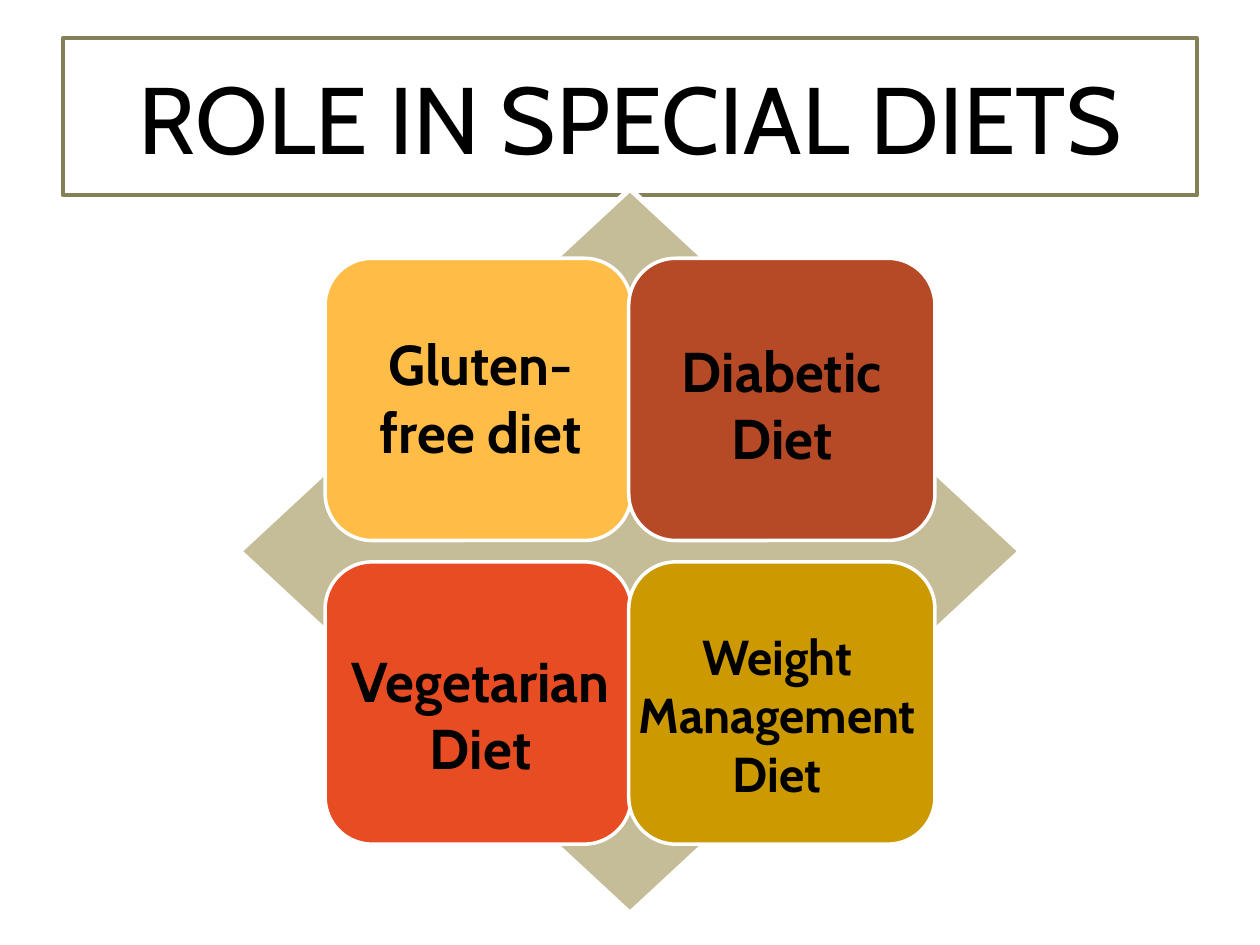
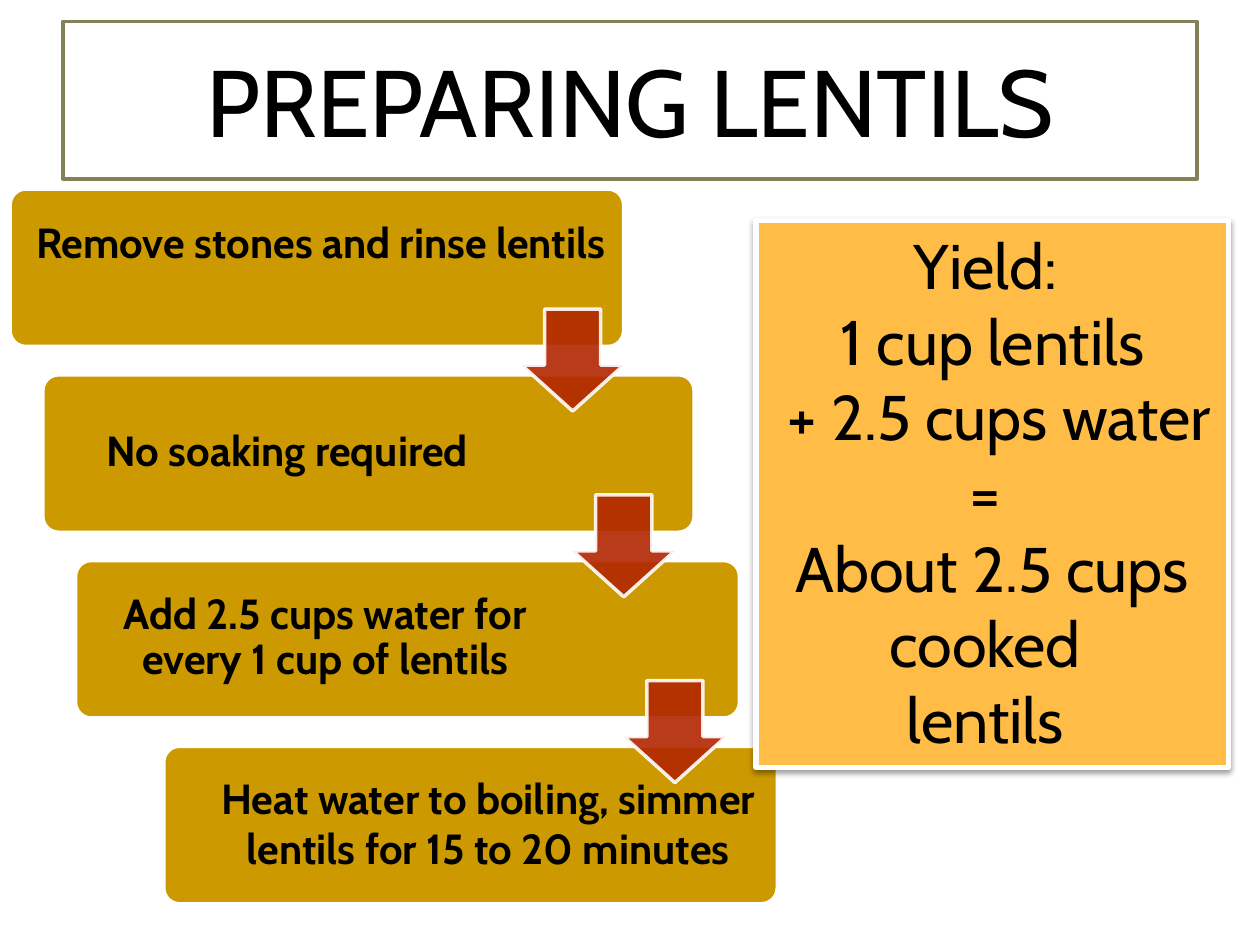
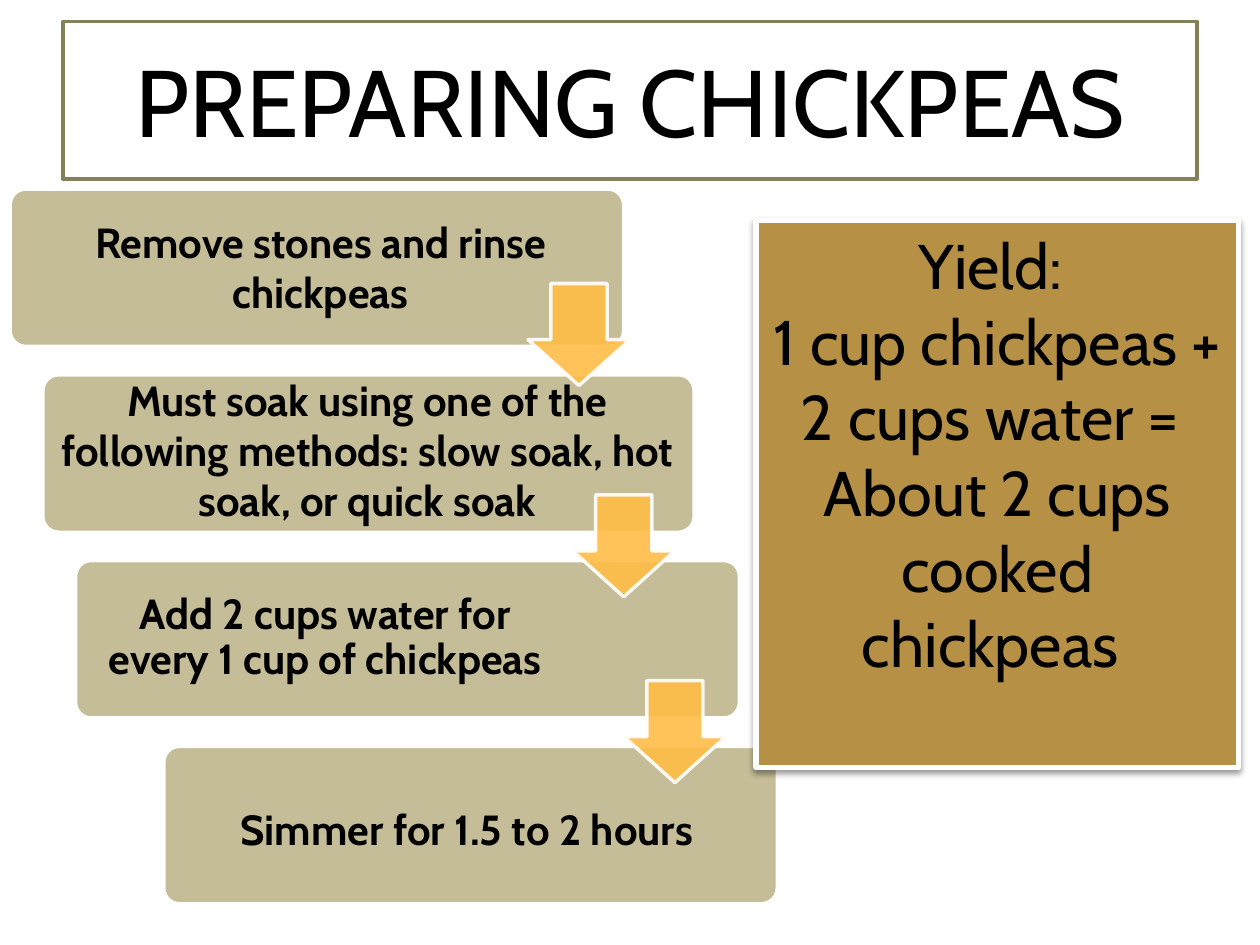
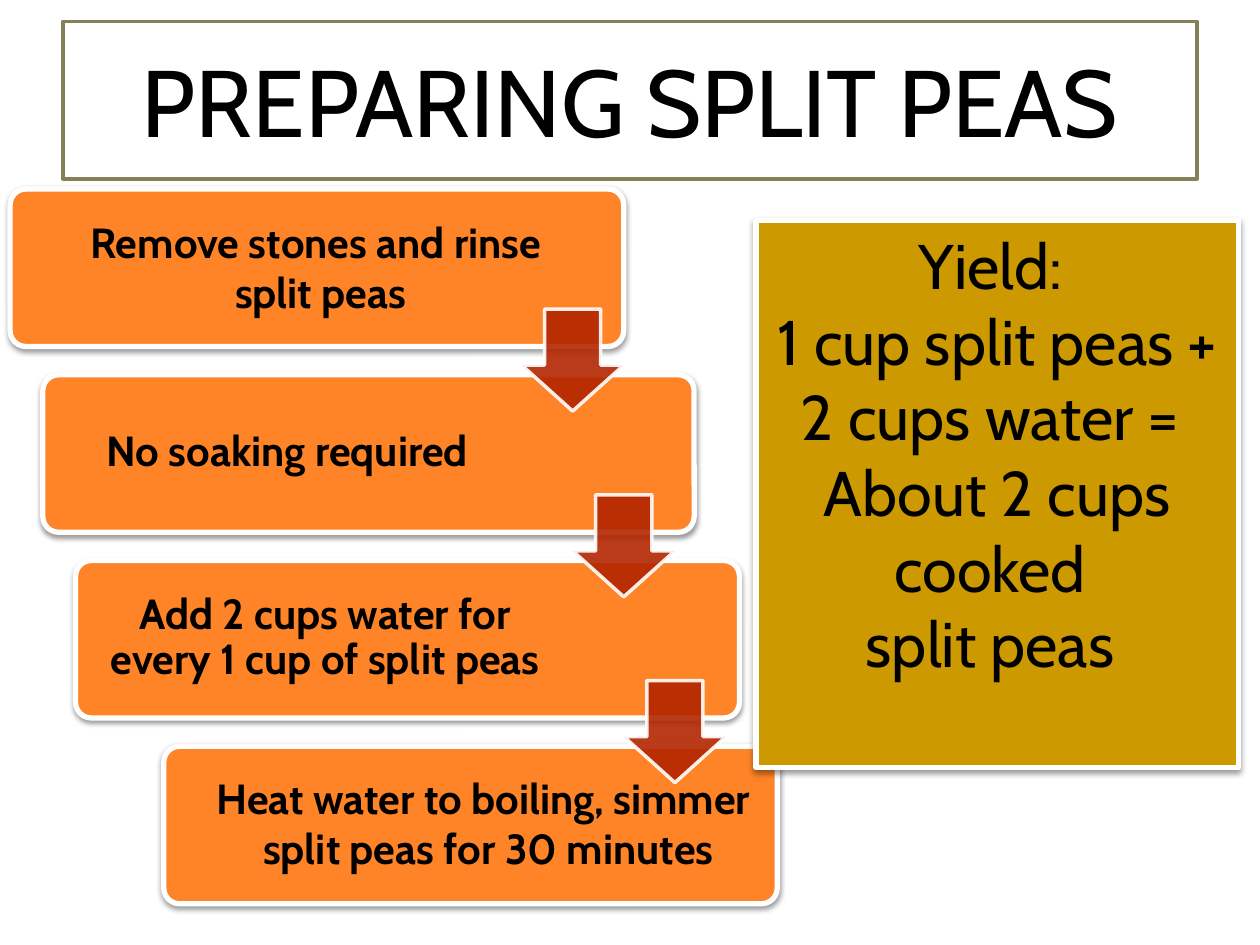
from pptx import Presentation
from pptx.dml.color import RGBColor as RGB
from pptx.enum.shapes import MSO_SHAPE as Geo
from pptx.enum.text import MSO_ANCHOR as Anchor, PP_ALIGN as Align
from pptx.oxml import parse_xml
from pptx.oxml.ns import nsdecls, qn
from pptx.util import Pt

BLACK = RGB(0x00, 0x00, 0x00)
WHITE = RGB(0xFF, 0xFF, 0xFF)
OLIVE = RGB(0x84, 0x80, 0x58)
SAND = RGB(0xC4, 0xBD, 0x97)
AMBER = RGB(0xFF, 0xBD, 0x47)
RUST = RGB(0xB6, 0x49, 0x26)
RED = RGB(0xE8, 0x4C, 0x22)
GOLD = RGB(0xCC, 0x99, 0x00)
BRICK = RGB(0xB2, 0x26, 0x00)
TAN = RGB(0xB5, 0x90, 0x45)
ORANGE = RGB(0xFF, 0x84, 0x27)
FONT = "Cabin"

DIETS = [
    ("Gluten-free diet", AMBER, 32, (189.4, 185, 170.6, 85)),
    ("Diabetic Diet", RUST, 32, (365.8, 188.6, 162, 85)),
    ("Vegetarian Diet", RED, 32, (189.4, 365.8, 170.6, 85)),
    ("Weight Management Diet", GOLD, 28, (354.2, 354.2, 180, 108.7)),
]

RINSE = (12.2, 120.2, 342, 65.5)
SOAK = (27.4, 216.7, 273.6, 84.2)
METHOD = (23.8, 210.2, 372.2, 94.3)
WATER = (46.1, 322.6, 279.4, 84.2)
HEAT = (90, 437.8, 378, 65.5)
SIMMER = (77.8, 455.8, 378, 36)
INNER = dict(anchor=Anchor.MIDDLE, inset=7.2, space=0.9)

RECIPES = [
    dict(
        title="PREPARING LENTILS", step=GOLD, arrow=BRICK, card=AMBER,
        wide=270, lift=False, first=(298.1, 176.6),
        notes=[
            (["Remove stones and rinse lentils"], RINSE, {}),
            (["No soaking required"], SOAK, INNER),
            (["Add 2.5 cups water for every 1 cup of lentils"], WATER, INNER),
            (["Heat water to boiling, simmer lentils for 15 to 20 minutes"],
             HEAT, {}),
        ],
        result=["Yield: ", "1 cup lentils", " + 2.5 cups water = ",
                "About 2.5 cups cooked ", "lentils "],
    ),
    dict(
        title="PREPARING CHICKPEAS", step=SAND, arrow=AMBER, card=TAN,
        wide=275.8, lift=False, first=(301.7, 162),
        notes=[
            (["Remove stones and rinse chickpeas"], RINSE, {}),
            (["Must soak using one of the following methods: slow soak, "
              "hot soak, or quick soak"], METHOD, {}),
            (["Add 2 cups water for every 1 cup of chickpeas"], WATER, INNER),
            (["Simmer for 1.5 to 2 hours"], SIMMER, {}),
        ],
        result=["Yield: ", "1 cup chickpeas + 2 cups water = ",
                "About 2 cups cooked chickpeas "],
    ),
    dict(
        title="PREPARING SPLIT PEAS", step=ORANGE, arrow=BRICK, card=GOLD,
        wide=275.8, lift=True, first=(298.1, 176.6),
        notes=[
            (["Remove stones and rinse ", "split peas"], RINSE, {}),
            (["No soaking required"], SOAK, INNER),
            (["Add 2 cups water for every 1 cup of split peas"], WATER, INNER),
            (["Heat water to boiling, simmer ", "split peas for 30 minutes"],
             HEAT, {}),
        ],
        result=["Yield: ", "1 cup split peas + 2 cups water = ",
                "About 2 cups cooked ", "split peas "],
    ),
]

STEPS = [(5.8, 350.6), (24.5, 372.2), (43.2, 379.4), (93.6, 350.6)]
PITCH = 106.15
SHIFT = 29.2


def write(shape, lines, size=24, bold=True, anchor=Anchor.TOP,
          inset=None, space=None):
    frame = shape.text_frame
    frame.word_wrap = True
    frame.vertical_anchor = anchor
    if inset is not None:
        frame.margin_left = frame.margin_right = Pt(inset)
        frame.margin_top = frame.margin_bottom = Pt(inset)
    for i, line in enumerate(lines):
        para = frame.add_paragraph() if i else frame.paragraphs[0]
        para.alignment = Align.CENTER
        para.line_spacing = space
        run = para.add_run()
        run.text = line
        font = run.font
        font.name, font.size, font.bold = FONT, Pt(size), bold
        font.color.rgb = BLACK


def label(slide, lines, area, **form):
    write(slide.shapes.add_textbox(*map(Pt, area)), lines, **form)


def draw(slide, kind, area, fill, edge=WHITE, width=2, adj=(),
         alpha=None, lift=False):
    shape = slide.shapes.add_shape(kind, *map(Pt, area))
    shape.shadow.inherit = False
    shape.fill.solid()
    shape.fill.fore_color.rgb = fill
    shape.line.color.rgb = edge
    shape.line.width = Pt(width)
    for i, value in enumerate(adj):
        shape.adjustments[i] = value
    props = shape._element.spPr
    if alpha:
        for color in props.iter(qn("a:srgbClr")):
            color.append(parse_xml(
                f'<a:alpha {nsdecls("a")} val="{alpha * 1000}"/>'))
    if lift:
        props.find(qn("a:effectLst")).append(parse_xml(
            f'<a:outerShdw {nsdecls("a")} blurRad="{Pt(3.1)}" '
            f'dist="{Pt(1.6)}" dir="5400000" rotWithShape="0">'
            '<a:srgbClr val="000000"><a:alpha val="38000"/></a:srgbClr>'
            '</a:outerShdw>'))
    return shape


def start(deck, title, top):
    slide = deck.slides.add_slide(deck.slide_layouts[6])
    box = draw(slide, Geo.RECTANGLE, (36, top, 648, 90), WHITE, edge=OLIVE)
    write(box, [title], size=54, bold=False, anchor=Anchor.MIDDLE)
    return slide


def diets(deck):
    slide = start(deck, "ROLE IN SPECIAL DIETS", 21.6)
    draw(slide, Geo.DIAMOND, (136.8, 108, 446.4, 414), SAND, width=3)
    for i, (name, fill, size, area) in enumerate(DIETS):
        row, col = divmod(i, 2)
        tile = (185.8 + 173.5 * col, 147.6 + 173.5 * row, 175, 161.3)
        draw(slide, Geo.ROUNDED_RECTANGLE, tile, fill)
    for name, fill, size, area in DIETS:
        label(slide, [name], area, size=size)


def recipe(deck, item):
    slide = start(deck, item["title"], 12.2)
    lift = item["lift"]
    for i, (left, wide) in enumerate(STEPS):
        draw(slide, Geo.ROUNDED_RECTANGLE, (left, 108 + PITCH * i, wide, 90),
             item["step"], width=3 if lift else 2, adj=[0.1], lift=lift)
    for i in range(3):
        spot = (298.1 + SHIFT * i, 176.6 + PITCH * i) if i else item["first"]
        draw(slide, Geo.DOWN_ARROW, (*spot, 58.3, 58.3), item["arrow"],
             adj=[0.55, 0.45], alpha=90)
    for lines, area, form in item["notes"]:
        label(slide, lines, area, **form)
    card = draw(slide, Geo.RECTANGLE, (432, 126, item["wide"], 312.5),
                item["card"], width=3, lift=True)
    write(card, item["result"], size=36, bold=False)


def main():
    deck = Presentation()
    deck.slide_width, deck.slide_height = Pt(720), Pt(540)
    diets(deck)
    for item in RECIPES:
        recipe(deck, item)
    deck.save("out.pptx")


if __name__ == "__main__":
    main()
